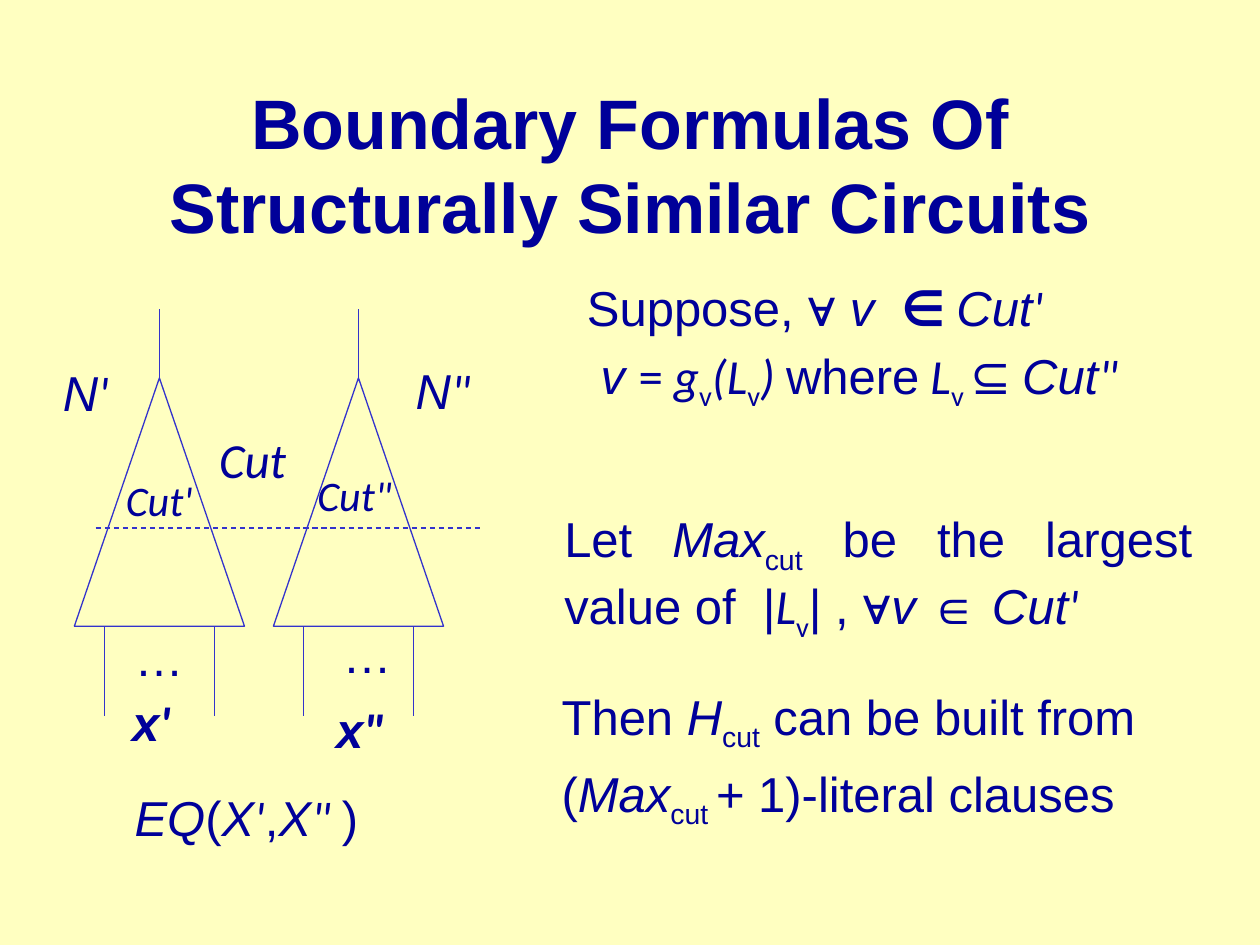
from lxml import etree
from pptx import Presentation
from pptx import util as u
from pptx.dml.color import RGBColor
from pptx.enum import dml, shapes, text
from pptx.oxml.ns import qn

COLORS = {"background": "FFFFC1", "text": "000099", "line": "3333CC"}
LINE_WIDTH = u.Pt(0.75)
TREE_TOP, TREE_WIDTH, TREE_HEIGHT = 3, 1.35, 1.97
TREE_BOTTOM = TREE_TOP + TREE_HEIGHT
OUTPUT_TOP, INPUT_BOTTOM = 2.45, 5.68
INPUT_OFFSETS = (0.24, 1.11)


def color(name):
    return RGBColor.from_string(COLORS[name])


def set_attributes(target, values):
    for name, value in values.items():
        setattr(target, name, value)


def add_run(paragraph, content, style="", size=28):
    """Style letters: b bold, i italic, c Calibri, s subscript."""
    run = paragraph.add_run()
    run.text = content
    set_attributes(run.font, {
        "name": "Calibri" if "c" in style else "Arial",
        "size": u.Pt(size),
        "bold": "b" in style,
        "italic": "i" in style,
    })
    run.font.color.rgb = color("text")
    if "s" in style:
        run.font._element.set("baseline", "-25000")


def add_text(slide, box, *paragraphs, size=28, wrap=False):
    """Each paragraph is a list of (text, style) runs."""
    frame = slide.shapes.add_textbox(*map(u.Inches, box)).text_frame
    set_attributes(frame, {
        "word_wrap": wrap,
        "auto_size": text.MSO_AUTO_SIZE.SHAPE_TO_FIT_TEXT,
    })
    for index, runs in enumerate(paragraphs):
        paragraph = frame.add_paragraph() if index else frame.paragraphs[0]
        set_attributes(paragraph, {
            "alignment": text.PP_ALIGN.JUSTIFY,
            "space_before": u.Pt(size * 0.2),
        })
        for content, style in runs:
            add_run(paragraph, content, style, size)


def add_line(slide, start, end, dashed=False):
    connector = slide.shapes.add_connector(
        shapes.MSO_CONNECTOR.STRAIGHT, *map(u.Inches, (*start, *end)))
    connector.line.color.rgb = color("line")
    connector.line.width = LINE_WIDTH
    if dashed:
        connector.line.dash_style = dml.MSO_LINE.DASH
    etree.SubElement(connector._element.spPr, qn("a:effectLst"))
    return connector


def add_circuit(slide, left):
    """Triangle with one output line on top and two input lines below."""
    triangle = slide.shapes.add_shape(
        shapes.MSO_SHAPE.ISOSCELES_TRIANGLE,
        *map(u.Inches, (left, TREE_TOP, TREE_WIDTH, TREE_HEIGHT)))
    triangle.shadow.inherit = False
    triangle.fill.background()
    triangle.line.color.rgb = color("line")
    triangle.line.width = LINE_WIDTH

    middle = left + TREE_WIDTH / 2
    output = add_line(slide, (middle, TREE_TOP), (middle, OUTPUT_TOP))
    output.begin_connect(triangle, 0)
    for offset in INPUT_OFFSETS:
        x = left + offset
        add_line(slide, (x, TREE_BOTTOM), (x, INPUT_BOTTOM))


def add_title(slide, content):
    title = slide.shapes.title
    set_attributes(title, {
        "left": u.Inches(0.75), "top": u.Inches(0.67),
        "width": u.Inches(8.5), "height": u.Inches(1.25),
    })
    title.text_frame.vertical_anchor = text.MSO_ANCHOR.MIDDLE
    paragraph = title.text_frame.paragraphs[0]
    paragraph.alignment = text.PP_ALIGN.CENTER
    add_run(paragraph, content, "b", 40)


def add_diagram(slide):
    for left in (0.59, 2.17):
        add_circuit(slide, left)
    add_line(slide, (0.76, 4.19), (3.81, 4.19), dashed=True)

    add_text(slide, (0.4, 2.83, 0.57, 0.57), [("N", "i"), ("'", "ic")])
    add_text(slide, (3.2, 2.81, 0.64, 0.57), [("N", "i"), ('"', "ic")])
    add_text(slide, (0.95, 5.45, 0.51, 0.57), [("x", "bi"), ("'", "bic")])
    add_text(slide, (2.57, 5.5, 0.59, 0.57), [("x", "bi"), ('"', "bic")])
    for left, top in ((0.97, 4.93), (2.62, 4.91)):
        add_text(slide, (left, top, 0.59, 0.57), [("…", "")])
    add_text(slide, (1.64, 3.36, 0.74, 0.57), [("Cut", "ic")])
    add_text(slide, (0.9, 3.72, 0.74, 0.5), [("Cut'", "ic")], size=24)
    add_text(slide, (2.42, 3.68, 0.8, 0.5), [('Cut"', "ic")], size=24)
    add_text(slide, (0.97, 6.2, 2, 0.57), [
        ("EQ", "i"), ("(", ""), ("X", "i"), ("'", "ic"), (",", ""),
        ("X", "i"), ('" ', "ic"), (")", "")])


def add_statements(slide):
    add_text(
        slide, (4.56, 2.15, 5.01, 1.14),
        [("Suppose, ", ""), ("∀ ", "b"), ("v  ", "i"), ("∈ ", "bc"),
         ("Cut", "i"), ("' ", "ic")],
        [(" v ", "i"), ("=", "c"), (" g", "ic"), ("v", "cs"), ("(L", "ic"),
         ("v", "cs"), (") ", "ic"), ("where", ""), (" L", "ic"),
         ("v ", "cs"), ("⊆ ", "c"), ("Cut", "i"), ('"', "ic")],
        wrap=True)
    add_text(
        slide, (4.38, 3.99, 5.18, 1.04),
        [("Let ", ""), ("Max", "i"), ("cut", "s"),
         (" be the largest value of  |", ""), ("L", "ic"), ("v", "cs"),
         ("| , ∀", ""), ("v", "i"), (" ∈ ", ""), ("Cut", "i"),
         ("'  ", "ic")],
        wrap=True)
    add_text(
        slide, (4.36, 5.4, 4.86, 1.14),
        [("Then ", ""), ("H", "i"), ("cut", "s"),
         (" can be built from", "")],
        [("(", ""), ("Max", "i"), ("cut ", "s"),
         ("+ 1)-literal clauses ", "")])


def main():
    presentation = Presentation()
    presentation.slide_width = u.Inches(10)
    presentation.slide_height = u.Inches(7.5)
    slide = presentation.slides.add_slide(presentation.slide_layouts[5])
    slide.background.fill.solid()
    slide.background.fill.fore_color.rgb = color("background")
    add_title(slide, "Boundary Formulas Of Structurally Similar Circuits")
    add_diagram(slide)
    add_statements(slide)
    presentation.save("out.pptx")


if __name__ == "__main__":
    main()
